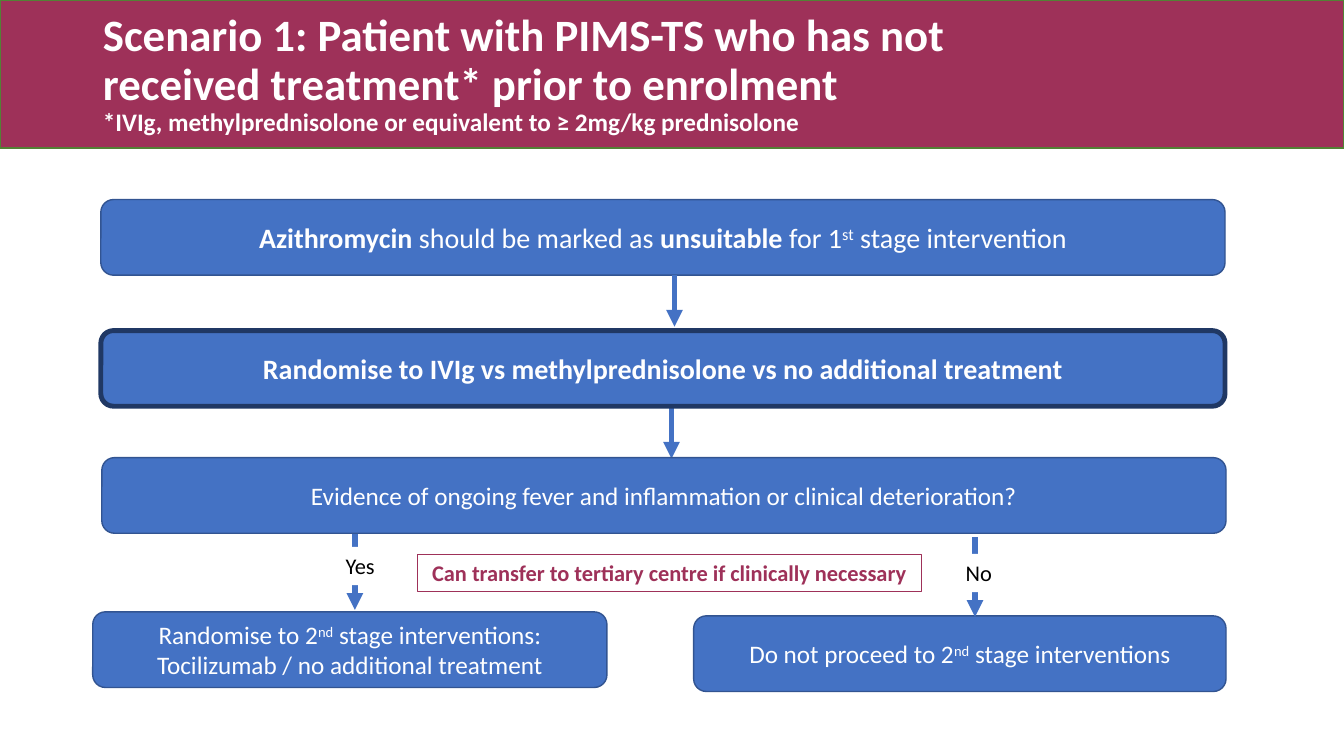
from pptx import Presentation
from pptx import util as u
from pptx.dml.color import RGBColor
from pptx.enum import shapes, text
from pptx.oxml import parse_xml
from pptx.oxml.ns import nsdecls

PLUM = RGBColor(0x9E, 0x31, 0x59)
GREEN = RGBColor(0x53, 0x81, 0x35)
BLUE = RGBColor(0x44, 0x72, 0xC4)
EDGE = RGBColor(0x32, 0x54, 0x91)
NAVY = RGBColor(0x20, 0x38, 0x64)
WHITE = RGBColor(0xFF, 0xFF, 0xFF)
BLACK = RGBColor(0, 0, 0)

RECT = shapes.MSO_SHAPE.RECTANGLE
ROUNDED = shapes.MSO_SHAPE.ROUNDED_RECTANGLE
LEFT, CENTER = text.PP_ALIGN.LEFT, text.PP_ALIGN.CENTER
TOP, MIDDLE = text.MSO_ANCHOR.TOP, text.MSO_ANCHOR.MIDDLE
PLAIN, BOLD, RAISED = "plain", "bold", "raised"


def apply(target, values):
    for name, value in values.items():
        setattr(target, name, value)


def add_span(para, words, size, color, style=PLAIN):
    span = para.add_run()
    span.text = words
    apply(span.font, {"name": "Calibri", "size": u.Pt(size), "bold": style == BOLD})
    span.font.color.rgb = color
    if style == RAISED:
        span.font._element.set("baseline", "30000")


def add_box(page, kind, place, fill=None, line=None, width=1):
    box = page.shapes.add_shape(kind, *map(u.Inches, place))
    box.shadow.inherit = False
    if fill is None:
        box.fill.background()
    else:
        box.fill.solid()
        box.fill.fore_color.rgb = fill
    if line is None:
        box.line.fill.background()
    else:
        box.line.color.rgb = line
        box.line.width = u.Pt(width)
    return box


def write(box, lines, size, color, align=CENTER, anchor=MIDDLE):
    frame = box.text_frame
    apply(frame, {"word_wrap": True, "vertical_anchor": anchor})
    for index, spans in enumerate(lines):
        para = frame.add_paragraph() if index else frame.paragraphs[0]
        para.alignment = align
        for words, style in spans:
            add_span(para, words, size, color, style)


def add_step(page, place, lines, size, line=EDGE, width=1):
    write(add_box(page, ROUNDED, place, BLUE, line, width), lines, size, WHITE)


def add_label(page, place, words):
    label = add_box(page, RECT, place, WHITE)
    write(label, [[(words, PLAIN)]], 16, BLACK, LEFT, TOP)


def add_arrow(page, x, top, bottom):
    ends = map(u.Inches, (x, top, x, bottom))
    arrow = page.shapes.add_connector(shapes.MSO_CONNECTOR.STRAIGHT, *ends)
    arrow.line.color.rgb = BLUE
    arrow.line.width = u.Pt(4)
    arrow.line._get_or_add_ln().append(
        parse_xml(f'<a:tailEnd {nsdecls("a")} type="triangle"/>'))
    arrow._element.spPr.append(parse_xml(f'<a:effectLst {nsdecls("a")}/>'))


def add_heading(page, heading, footnote):
    banner = add_box(page, RECT, (0, 0, 13.33, 1.47), PLUM, GREEN)
    page.shapes._spTree.insert(2, banner._element)
    title = page.shapes.title
    place = map(u.Inches, (0.92, 0.02, 8.99, 1.45))
    apply(title, dict(zip(("left", "top", "width", "height"), place)))
    apply(title.text_frame, {"word_wrap": True, "vertical_anchor": MIDDLE,
                             "auto_size": text.MSO_AUTO_SIZE.NONE})
    para = title.text_frame.paragraphs[0]
    apply(para, {"alignment": LEFT, "line_spacing": 0.9})
    add_span(para, heading, 32, WHITE, BOLD)
    para.add_line_break()
    add_span(para, footnote, 18, WHITE, BOLD)


def main():
    deck = Presentation()
    deck.slide_width, deck.slide_height = u.Inches(13.33), u.Inches(7.5)
    page = deck.slides.add_slide(deck.slide_layouts[5])

    add_heading(page,
                "Scenario 1: Patient with PIMS-TS who has not received treatment* prior to enrolment",
                "*IVIg, methylprednisolone or equivalent to ≥ 2mg/kg prednisolone")

    add_arrow(page, 6.66, 4.03, 4.55)
    add_step(page, (1, 1.98, 11.15, 0.75),
             [[("Azithromycin", BOLD), (" should be marked as ", PLAIN),
               ("unsuitable", BOLD), (" for 1", PLAIN), ("st", RAISED),
               (" stage intervention", PLAIN)]], 20)
    add_step(page, (1, 3.28, 11.15, 0.75),
             [[("Randomise to IVIg vs methylprednisolone vs no additional treatment", BOLD)]],
             20, NAVY, 3.5)
    add_arrow(page, 6.69, 2.73, 3.24)

    add_step(page, (0.92, 6.07, 5.1, 0.75),
             [[("Randomise to 2", PLAIN), ("nd", RAISED), (" stage interventions:", PLAIN)],
              [("Tocilizumab / no additional treatment", PLAIN)]], 18)
    add_step(page, (6.88, 6.11, 5.28, 0.75),
             [[("Do not proceed to 2", PLAIN), ("nd", RAISED),
               (" stage interventions", PLAIN)]], 18)

    for answer, x, top in (("Yes", 3.52, 5.26), ("No", 9.67, 5.33)):
        add_arrow(page, x, top, top + 0.79)
        add_label(page, (x - 0.19, top + 0.165, 0.67, 0.38), answer)

    add_step(page, (1.01, 4.54, 11.15, 0.75),
             [[("Evidence of ongoing fever and inflammation or clinical deterioration?", PLAIN)]], 18)
    transfer = add_box(page, RECT, (4.14, 5.5, 5, 0.37), line=PLUM)
    write(transfer, [[("Can transfer to tertiary centre if clinically necessary", BOLD)]],
          16, PLUM, anchor=TOP)

    deck.save("out.pptx")


if __name__ == "__main__":
    main()
